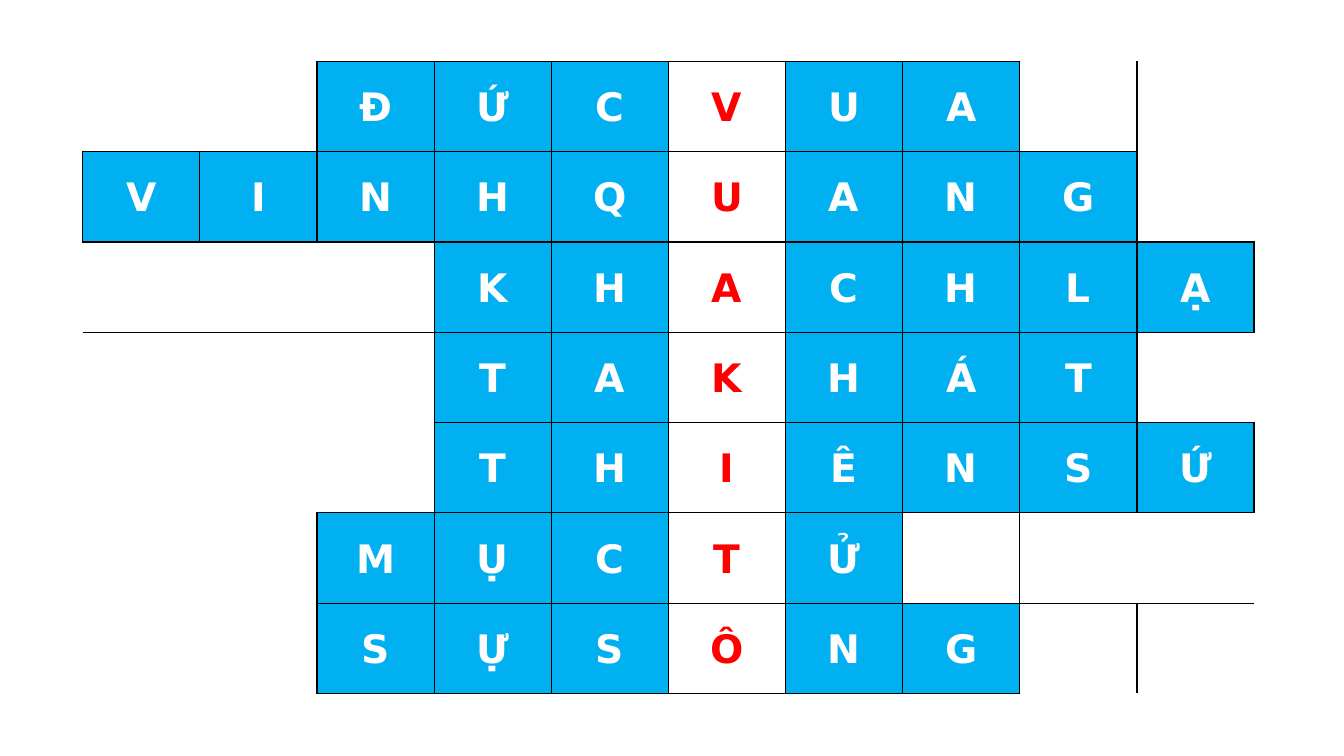
from lxml.etree import SubElement
from pptx import Presentation
from pptx.dml.color import RGBColor as RGB
from pptx.enum.text import MSO_ANCHOR as Anchor, PP_ALIGN as Align
from pptx.oxml.ns import qn
from pptx.util import Inches, Pt

BLUE = RGB(0x00, 0xB0, 0xF0)
WHITE = RGB(0xFF, 0xFF, 0xFF)
RED = RGB(0xFF, 0x00, 0x00)
BLACK = RGB(0x00, 0x00, 0x00)
PLAIN = "{2D5ABB26-0587-4C30-8999-92F81FD0307C}"

ROWS, COLS, KEY = 7, 10, 5
WORDS = [
    (2, "ĐỨCVUA"),
    (0, "VINHQUANG"),
    (3, "KHACHLẠ"),
    (3, "TAKHÁT"),
    (3, "THIÊNSỨ"),
    (2, "MỤCTỬ"),
    (2, "SỰSÔNG"),
]
SIDES = {"a:lnL": (0, -1), "a:lnR": (0, 1), "a:lnT": (-1, 0), "a:lnB": (1, 0)}

deck = Presentation()
deck.slide_width, deck.slide_height = Inches(13.33), Inches(7.5)
slide = deck.slides.add_slide(deck.slide_layouts[6])

frame = slide.shapes.add_table(
    ROWS, COLS, Inches(0.82), Inches(0.61), Inches(11.62), Inches(6.27))
table = frame.table
table.first_row = table.horz_banding = False
table._tbl.tblPr.find(qn("a:tableStyleId")).text = PLAIN

letters = {(row, start + i): letter
           for row, (start, word) in enumerate(WORDS)
           for i, letter in enumerate(word)}

for row in range(ROWS):
    for col in range(COLS):
        cell = table.cell(row, col)
        letter = letters.get((row, col))
        props = cell._tc.get_or_add_tcPr()
        for side, (down, right) in SIDES.items():
            if letter or (row + down, col + right) in letters:
                line = SubElement(props, qn(side), w=str(Pt(1)))
                paint = SubElement(line, qn("a:solidFill"))
                SubElement(paint, qn("a:srgbClr"), val=str(BLACK))
        if not letter:
            cell.fill.background()
            continue
        cell.fill.solid()
        cell.fill.fore_color.rgb = WHITE if col == KEY else BLUE
        cell.vertical_anchor = Anchor.MIDDLE
        cell.margin_left = cell.margin_right = Inches(0.07)
        cell.margin_top = cell.margin_bottom = 0
        cell.text = letter
        para = cell.text_frame.paragraphs[0]
        para.alignment = Align.CENTER
        para.line_spacing = 1.07
        para.space_after = Pt(8)
        font = para.font
        font.name, font.size, font.bold = "DejaVu Sans", Pt(28), True
        font.color.rgb = RED if col == KEY else WHITE

deck.save("out.pptx")
